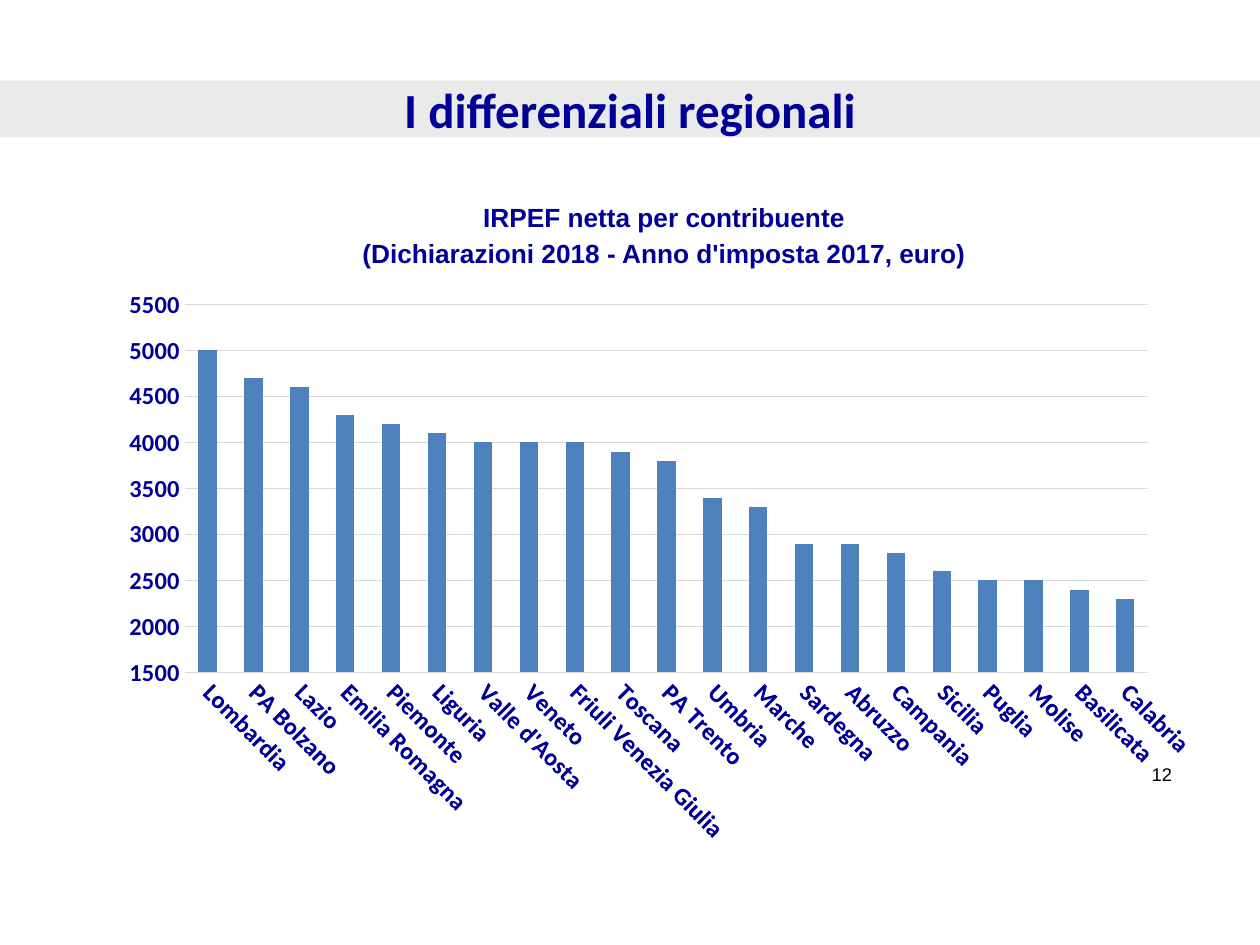
from lxml import etree
from pptx import Presentation
from pptx.chart.data import CategoryChartData
from pptx.dml.color import RGBColor
from pptx.enum.chart import XL_CHART_TYPE, XL_TICK_MARK
from pptx.enum.shapes import MSO_SHAPE
from pptx.enum.text import MSO_ANCHOR, PP_ALIGN
from pptx.oxml.ns import qn
from pptx.util import Pt

NAVY = RGBColor(0x00, 0x00, 0x99)
BLACK = RGBColor(0x00, 0x00, 0x00)
BAND_GREY = RGBColor(0xEA, 0xEA, 0xEA)
GRID_GREY = RGBColor(0xD9, 0xD9, 0xD9)
BAR_BLUE = RGBColor(0x4F, 0x81, 0xBD)

TAX_BY_REGION = {
    "Lombardia": 5000, "PA Bolzano": 4700, "Lazio": 4600,
    "Emilia Romagna": 4300, "Piemonte": 4200, "Liguria": 4100,
    "Valle d'Aosta": 4000, "Veneto": 4000, "Friuli Venezia Giulia": 4000,
    "Toscana": 3900, "PA Trento": 3800, "Umbria": 3400, "Marche": 3300,
    "Sardegna": 2900, "Abruzzo": 2900, "Campania": 2800, "Sicilia": 2600,
    "Puglia": 2500, "Molise": 2500, "Basilicata": 2400, "Calabria": 2300,
}
PLOT_LAYOUT = {"x": 0.065, "y": 0.043, "w": 0.894, "h": 0.635}


def style_font(font, name, size, color, bold=False):
    font.name = name
    font.size = Pt(size)
    font.bold = bold
    font.color.rgb = color


def write_lines(frame, lines, align, spacing, **style):
    frame.word_wrap = True
    frame.text = "\n".join(lines)
    for para in frame.paragraphs:
        para.alignment = align
        para.line_spacing = spacing
        for span in para.runs:
            style_font(span.font, **style)


def add_title_band(page, box):
    band = page.shapes.add_shape(MSO_SHAPE.RECTANGLE, *box)
    band.shadow.inherit = False
    band.fill.solid()
    band.fill.fore_color.rgb = BAND_GREY
    band.line.fill.background()
    band.text_frame.vertical_anchor = MSO_ANCHOR.MIDDLE
    write_lines(band.text_frame, ["I differenziali regionali"], PP_ALIGN.CENTER, 1.0,
                name="Calibri", size=28, color=NAVY, bold=True)


def add_caption(page, box, lines, align, spacing, **style):
    caption = page.shapes.add_textbox(*box)
    write_lines(caption.text_frame, lines, align, spacing, name="Arial", **style)


def set_plot_layout(chart):
    plot_area = chart.plots[0]._element.getparent()
    for old_layout in plot_area.findall(qn("c:layout")):
        plot_area.remove(old_layout)
    layout = etree.Element(qn("c:layout"))
    manual = etree.SubElement(layout, qn("c:manualLayout"))
    settings = {"layoutTarget": "inner", "xMode": "edge", "yMode": "edge", **PLOT_LAYOUT}
    for tag, value in settings.items():
        etree.SubElement(manual, qn(f"c:{tag}")).set("val", str(value))
    plot_area.insert(0, layout)


def add_region_chart(page, box):
    data = CategoryChartData(number_format="0")
    data.categories = list(TAX_BY_REGION)
    data.add_series("IRPEF netta", list(TAX_BY_REGION.values()))
    chart = page.shapes.add_chart(XL_CHART_TYPE.COLUMN_CLUSTERED, *box, data).chart
    chart.has_title = False
    chart.has_legend = False
    style_font(chart.font, "Calibri", 10, BLACK)
    set_plot_layout(chart)

    plot = chart.plots[0]
    plot.gap_width = 150
    plot.vary_by_categories = False
    bars = plot.series[0].format.fill
    bars.solid()
    bars.fore_color.rgb = BAR_BLUE

    for axis in (chart.category_axis, chart.value_axis):
        axis.major_tick_mark = XL_TICK_MARK.NONE
        axis.minor_tick_mark = XL_TICK_MARK.NONE
        axis.format.line.fill.background()
        style_font(axis.tick_labels.font, "Calibri", 14, NAVY, bold=True)
    label_body = chart.category_axis._element.find(qn("c:txPr")).find(qn("a:bodyPr"))
    label_body.set("rot", "2700000")
    label_body.set("vert", "horz")

    values = chart.value_axis
    values.minimum_scale = 1500
    values.maximum_scale = 5500
    values.major_unit = 500
    values.tick_labels.number_format = "0"
    values.tick_labels.number_format_is_linked = False
    values.has_major_gridlines = True
    grid = values.major_gridlines.format.line
    grid.width = Pt(0.75)
    grid.color.rgb = GRID_GREY


def main():
    deck = Presentation()
    deck.slide_width = Pt(720)
    deck.slide_height = Pt(540)
    page = deck.slides.add_slide(deck.slide_layouts[6])

    add_title_band(page, (Pt(0), Pt(46), Pt(720), Pt(32.4)))
    add_caption(page, (Pt(550.8), Pt(432.7), Pt(126), Pt(28)), ["12"],
                PP_ALIGN.RIGHT, 1.0, size=10.5, color=BLACK)
    add_caption(page, (Pt(194.4), Pt(108.7), Pt(370), Pt(49)),
                ["IRPEF netta per contribuente",
                 "(Dichiarazioni 2018 - Anno d'imposta 2017, euro)"],
                PP_ALIGN.CENTER, 1.15, size=15, color=NAVY, bold=True)
    add_region_chart(page, (Pt(65.5), Pt(159.8), Pt(617.8), Pt(331.2)))
    deck.save("out.pptx")


if __name__ == "__main__":
    main()
